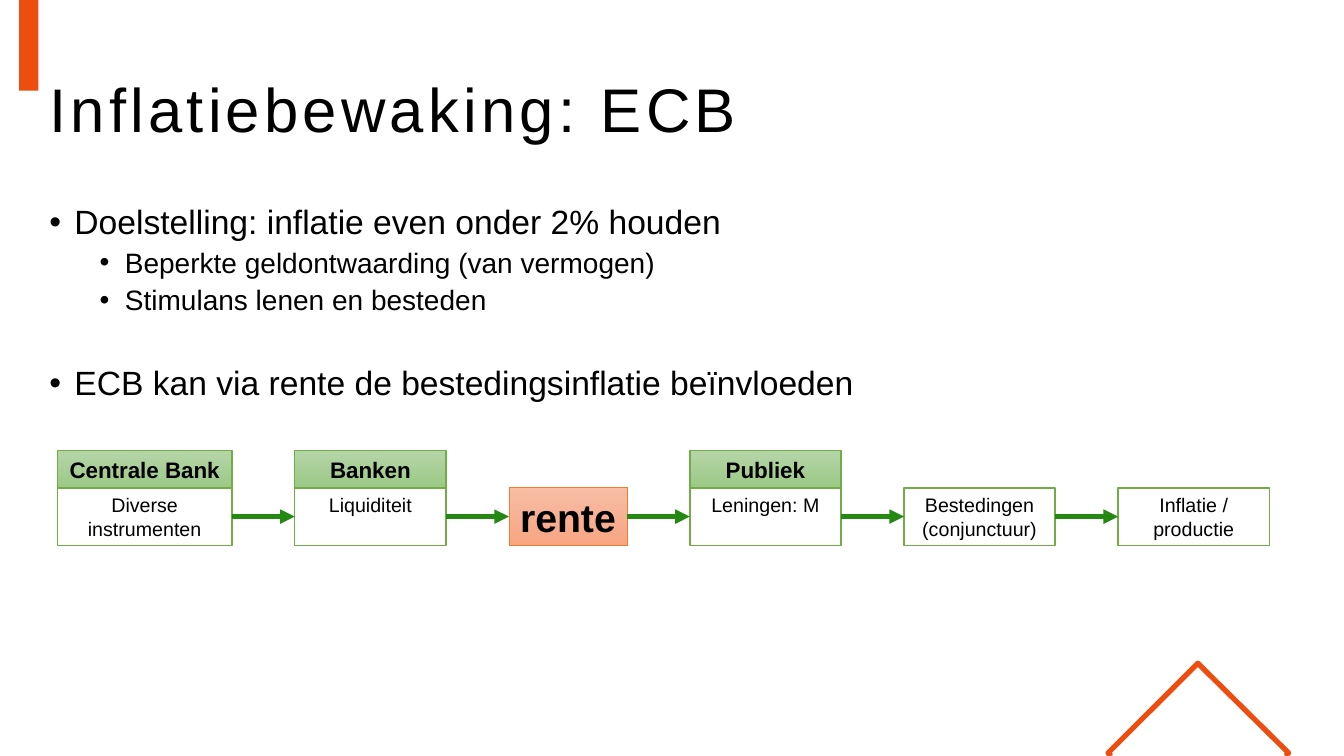
from dataclasses import dataclass

from lxml import etree
from pptx import Presentation
from pptx.dml.color import RGBColor
from pptx.enum.shapes import MSO_CONNECTOR, MSO_SHAPE
from pptx.enum.text import MSO_ANCHOR, MSO_AUTO_SIZE, PP_ALIGN
from pptx.oxml.ns import qn
from pptx.util import Inches, Pt

RECTANGLE = MSO_SHAPE.RECTANGLE
STRAIGHT = MSO_CONNECTOR.STRAIGHT
MIDDLE, TOP = MSO_ANCHOR.MIDDLE, MSO_ANCHOR.TOP
CENTER, LEFT = PP_ALIGN.CENTER, PP_ALIGN.LEFT
NO_AUTOFIT = MSO_AUTO_SIZE.NONE
LEFT_SIDE, RIGHT_SIDE = 1, 3


@dataclass(frozen=True)
class Theme:
    font: str = "Arial"
    ink: str = "000000"
    accent: str = "ED4D0F"
    arrow: str = "258812"
    box: tuple = ("FFFFFF",)
    box_line: str = "70AD47"
    header: tuple = ("B5D5A7", "9CC987")
    rate: tuple = ("F7BDA5", "F8A582")
    rate_line: str = "ED7D31"
    title_size: int = 44
    point_sizes: tuple = (24, 20)
    header_size: int = 16
    box_size: int = 14
    rate_size: int = 28


@dataclass(frozen=True)
class Point:
    text: str
    level: int
    space_before: float


@dataclass(frozen=True)
class Stage:
    lines: tuple
    width: float = 1.5
    header: str = ""
    anchor: MSO_ANCHOR = MIDDLE
    is_rate: bool = False


THEME = Theme()
POINTS = (
    Point("Doelstelling: inflatie even onder 2% houden", 0, 10),
    Point("Beperkte geldontwaarding (van vermogen)", 1, 5),
    Point("Stimulans lenen en besteden", 1, 5),
    Point("ECB kan via rente de bestedingsinflatie beïnvloeden", 0, 36),
)
STAGES = (
    Stage(("Diverse instrumenten",), 1.73, "Centrale Bank"),
    Stage(("Liquiditeit",), header="Banken", anchor=TOP),
    Stage(("rente",), 1.17, is_rate=True),
    Stage(("Leningen: M",), header="Publiek", anchor=TOP),
    Stage(("Bestedingen", "(conjunctuur)")),
    Stage(("Inflatie /", "productie")),
)
FLOW_LEFT, FLOW_RIGHT = 0.57, 12.59
HEADER_TOP, HEADER_HEIGHT, STAGE_HEIGHT = 4.47, 0.37, 0.57
STAGE_TOP = HEADER_TOP + HEADER_HEIGHT


def color(code: str) -> RGBColor:
    return RGBColor.from_string(code)


def add_run(paragraph, text: str, size: float, bold: bool = False):
    run = paragraph.add_run()
    run.text = text
    run.font.name = THEME.font
    run.font.size = Pt(size)
    run.font.bold = bold
    run.font.color.rgb = color(THEME.ink)
    return run


def paint(shape, fills: tuple) -> None:
    shape.shadow.inherit = False
    if len(fills) == 1:
        shape.fill.solid()
        shape.fill.fore_color.rgb = color(fills[0])
        return
    shape.fill.gradient()
    shape.fill.gradient_angle = 270
    for stop, code in zip(shape.fill.gradient_stops, fills):
        stop.color.rgb = color(code)


def add_box(shapes, left: float, top: float, width: float, height: float,
            lines: tuple, size: float, fills: tuple, outline: str,
            line_width: float = 1, bold: bool = False,
            anchor: MSO_ANCHOR = MIDDLE):
    box = shapes.add_shape(RECTANGLE, Inches(left), Inches(top),
                           Inches(width), Inches(height))
    paint(box, fills)
    box.line.color.rgb = color(outline)
    box.line.width = Pt(line_width)
    frame = box.text_frame
    frame.word_wrap = True
    frame.vertical_anchor = anchor
    for index, line in enumerate(lines):
        paragraph = frame.add_paragraph() if index else frame.paragraphs[0]
        paragraph.alignment = CENTER
        add_run(paragraph, line, size, bold)
    return box


def add_stage(slide, stage: Stage, left: float):
    if stage.is_rate:
        return add_box(slide.shapes, left, STAGE_TOP, stage.width, STAGE_HEIGHT,
                       stage.lines, THEME.rate_size, THEME.rate,
                       THEME.rate_line, 0.5, True)
    shapes = slide.shapes
    if stage.header:
        shapes = slide.shapes.add_group_shape().shapes
        add_box(shapes, left, HEADER_TOP, stage.width, HEADER_HEIGHT,
                (stage.header,), THEME.header_size, THEME.header,
                THEME.box_line, bold=True)
    return add_box(shapes, left, STAGE_TOP, stage.width, STAGE_HEIGHT,
                   stage.lines, THEME.box_size, THEME.box,
                   THEME.box_line, anchor=stage.anchor)


def add_arrow(slide, source, target) -> None:
    arrow = slide.shapes.add_connector(STRAIGHT, 0, 0, 0, 0)
    arrow.begin_connect(source, RIGHT_SIDE)
    arrow.end_connect(target, LEFT_SIDE)
    arrow.line.color.rgb = color(THEME.arrow)
    arrow.line.width = Pt(3.5)
    properties = arrow.line._get_or_add_ln()
    etree.SubElement(properties, qn("a:tailEnd"), type="triangle")
    etree.SubElement(arrow._element.spPr, qn("a:effectLst"))


def add_flow(slide) -> None:
    free_width = FLOW_RIGHT - FLOW_LEFT - sum(stage.width for stage in STAGES)
    gap = free_width / (len(STAGES) - 1)
    left, boxes = FLOW_LEFT, []
    for stage in STAGES:
        boxes.append(add_stage(slide, stage, left))
        left += stage.width + gap
    for source, target in zip(boxes, boxes[1:]):
        add_arrow(slide, source, target)


def add_decoration(slide) -> None:
    bar = slide.shapes.add_shape(RECTANGLE, Inches(0.19), 0,
                                 Inches(0.19), Inches(0.9))
    paint(bar, (THEME.accent,))
    bar.line.fill.background()
    corners = [(Inches(x), Inches(y)) for x, y in (
        (11.02, 7.5), (10.99, 7.47), (11.88, 6.58), (12.78, 7.47), (12.75, 7.5))]
    builder = slide.shapes.build_freeform(*corners[0])
    builder.add_line_segments(corners[1:], close=False)
    diamond = builder.convert_to_shape()
    diamond.shadow.inherit = False
    diamond.fill.background()
    diamond.line.color.rgb = color(THEME.accent)
    diamond.line.width = Pt(3.75)


def fill_title(slide) -> None:
    title = slide.shapes.title
    title.left, title.top = Inches(0.39), Inches(0.39)
    title.width, title.height = Inches(12.61), Inches(1.45)
    frame = title.text_frame
    frame.auto_size = NO_AUTOFIT
    frame.vertical_anchor = MIDDLE
    heading = frame.paragraphs[0]
    heading.alignment = LEFT
    heading.line_spacing = 0.9
    run = add_run(heading, "Inflatiebewaking: ECB", THEME.title_size)
    run.font._element.set("spc", "300")


def add_points(slide) -> None:
    body = slide.shapes.add_textbox(Inches(0.39), Inches(1.99),
                                    Inches(12.61), Inches(5.12))
    frame = body.text_frame
    frame.word_wrap = True
    for index, point in enumerate(POINTS):
        paragraph = frame.add_paragraph() if index else frame.paragraphs[0]
        paragraph.level = point.level
        paragraph.line_spacing = 0.9
        paragraph.space_before = Pt(point.space_before)
        properties = paragraph._p.get_or_add_pPr()
        properties.set("marL", str(Inches(0.25 + 0.5 * point.level)))
        properties.set("indent", str(Inches(-0.25)))
        etree.SubElement(properties, qn("a:buFont"), typeface=THEME.font)
        etree.SubElement(properties, qn("a:buChar"), char="•")
        add_run(paragraph, point.text, THEME.point_sizes[point.level])


def main() -> None:
    presentation = Presentation()
    presentation.slide_width = Inches(13.33)
    presentation.slide_height = Inches(7.5)
    slide = presentation.slides.add_slide(presentation.slide_layouts[5])
    add_decoration(slide)
    fill_title(slide)
    add_points(slide)
    add_flow(slide)
    presentation.save("out.pptx")


if __name__ == "__main__":
    main()
